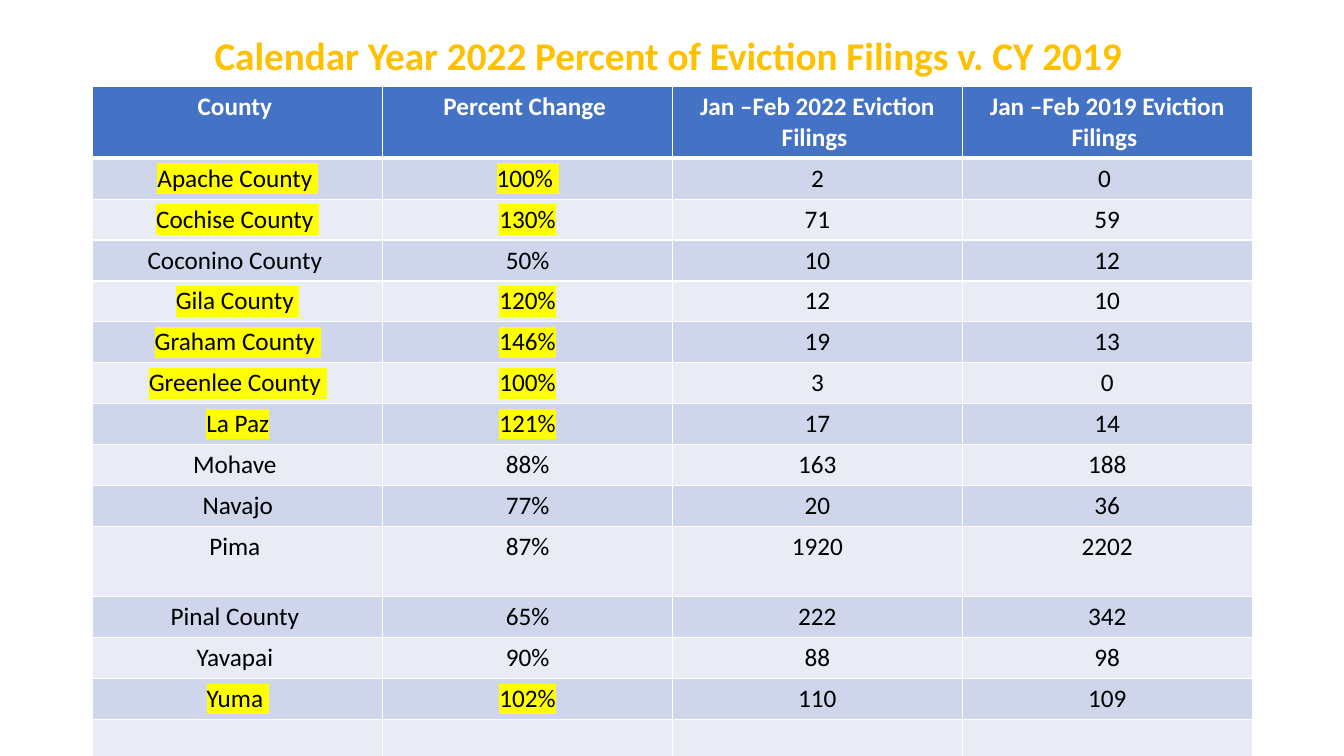
import pptx
import pptx.dml.color
import pptx.enum.text
import pptx.oxml
import pptx.oxml.ns
import pptx.util
from pptx.util import Inches

FONT = "Calibri"
GOLD, WHITE, BLACK, YELLOW = "FFC000", "FFFFFF", "000000", "FFFF00"
HEADER_BLUE, BANDS = "4472C4", ("CFD5EA", "E9EBF5")
ROW_HEIGHT, TALL_ROW_HEIGHT = 0.4, 0.7

HEADERS = ("County ", "Percent Change ", "Jan –Feb 2022 Eviction Filings ",
           "Jan –Feb 2019 Eviction Filings ")
COUNTIES = [
    ("Apache County ", "100% ", "2", "0 "),
    ("Cochise County ", "130%", "71", "59"),
    ("Coconino County ", "50%", "10", "12"),
    ("Gila County ", "120%", "12", "10"),
    ("Graham County ", "146%", "19", "13"),
    ("Greenlee County ", "100%", "3", "0"),
    ("La Paz", "121%", "17", "14"),
    ("Mohave ", "88%", "163", "188"),
    ("Navajo", "77%", "20", "36"),
    ("Pima ", "87%", "1920", "2202"),
    ("Pinal County ", "65%", "222", "342"),
    ("Yavapai ", "90%", "88", "98"),
    ("Yuma ", "102%", "110", "109"),
]
SPARE_ROW = ("", "", "", "")


def rgb(hex_color):
    return pptx.dml.color.RGBColor.from_string(hex_color)


def xml(markup):
    """Parse one element, adding the DrawingML namespace to its tag."""
    tag, rest = markup.split(" ", 1)
    return pptx.oxml.parse_xml(f"{tag} {pptx.oxml.ns.nsdecls('a')} {rest}")


def write(frame, text, size=18, color=BLACK, bold=False, highlight=None, spacing=None):
    paragraph = frame.paragraphs[0]
    paragraph.alignment = pptx.enum.text.PP_ALIGN.CENTER
    if spacing:
        paragraph.line_spacing = spacing
    if not text:
        paragraph.font.size = pptx.util.Pt(size)
        return
    run = paragraph.add_run()
    run.text = text
    run.font.name = FONT
    run.font.size = pptx.util.Pt(size)
    run.font.bold = bold
    run.font.color.rgb = rgb(color)
    if highlight:
        solid_fill = run.font._element.find(pptx.oxml.ns.qn("a:solidFill"))
        solid_fill.addnext(xml(f'<a:highlight ><a:srgbClr val="{highlight}"/></a:highlight>'))


def style_cell(cell, fill, top=1, bottom=1):
    """Give a cell its fill and white borders, with widths in points."""
    properties = cell._tc.get_or_add_tcPr()
    for side, width in (("L", 1), ("R", 1), ("T", top), ("B", bottom)):
        properties.append(xml(
            f'<a:ln{side} w="{pptx.util.Pt(width)}"><a:solidFill>'
            f'<a:srgbClr val="{WHITE}"/></a:solidFill></a:ln{side}>'))
    cell.fill.solid()
    cell.fill.fore_color.rgb = rgb(fill)


def add_title(slide, text):
    title = slide.shapes.title
    title.left, title.top = Inches(0.92), Inches(0.4)
    title.width, title.height = Inches(11.5), Inches(0.35)
    title.text_frame.auto_size = pptx.enum.text.MSO_AUTO_SIZE.NONE
    title.text_frame.vertical_anchor = pptx.enum.text.MSO_ANCHOR.MIDDLE
    write(title.text_frame, text, size=28, color=GOLD, bold=True, spacing=0.9)


def add_filings_table(slide):
    """Add the county table; counties at or above 100% are highlighted."""
    rows = [HEADERS, *COUNTIES, SPARE_ROW]
    table = slide.shapes.add_table(len(rows), len(HEADERS), Inches(0.92), Inches(0.86),
                                   Inches(11.5), Inches(6.6)).table
    for row_index, values in enumerate(rows):
        is_header = row_index == 0
        is_tall = is_header or values[0] == "Pima "
        table.rows[row_index].height = Inches(TALL_ROW_HEIGHT if is_tall else ROW_HEIGHT)
        increased = not is_header and int(values[1].strip().rstrip("%") or 0) >= 100
        for column, value in enumerate(values):
            cell = table.cell(row_index, column)
            if is_header:
                style_cell(cell, HEADER_BLUE, bottom=3)
                write(cell.text_frame, value, color=WHITE, bold=True)
            else:
                style_cell(cell, BANDS[(row_index - 1) % 2], top=3 if row_index == 1 else 1)
                write(cell.text_frame, value,
                      highlight=YELLOW if increased and column < 2 else None)


def main():
    presentation = pptx.Presentation()
    presentation.slide_width, presentation.slide_height = Inches(13.33), Inches(7.5)
    slide = presentation.slides.add_slide(presentation.slide_layouts.get_by_name("Title Only"))
    add_title(slide, "Calendar Year 2022 Percent of Eviction Filings v. CY 2019 ")
    add_filings_table(slide)
    presentation.save("out.pptx")


if __name__ == "__main__":
    main()
